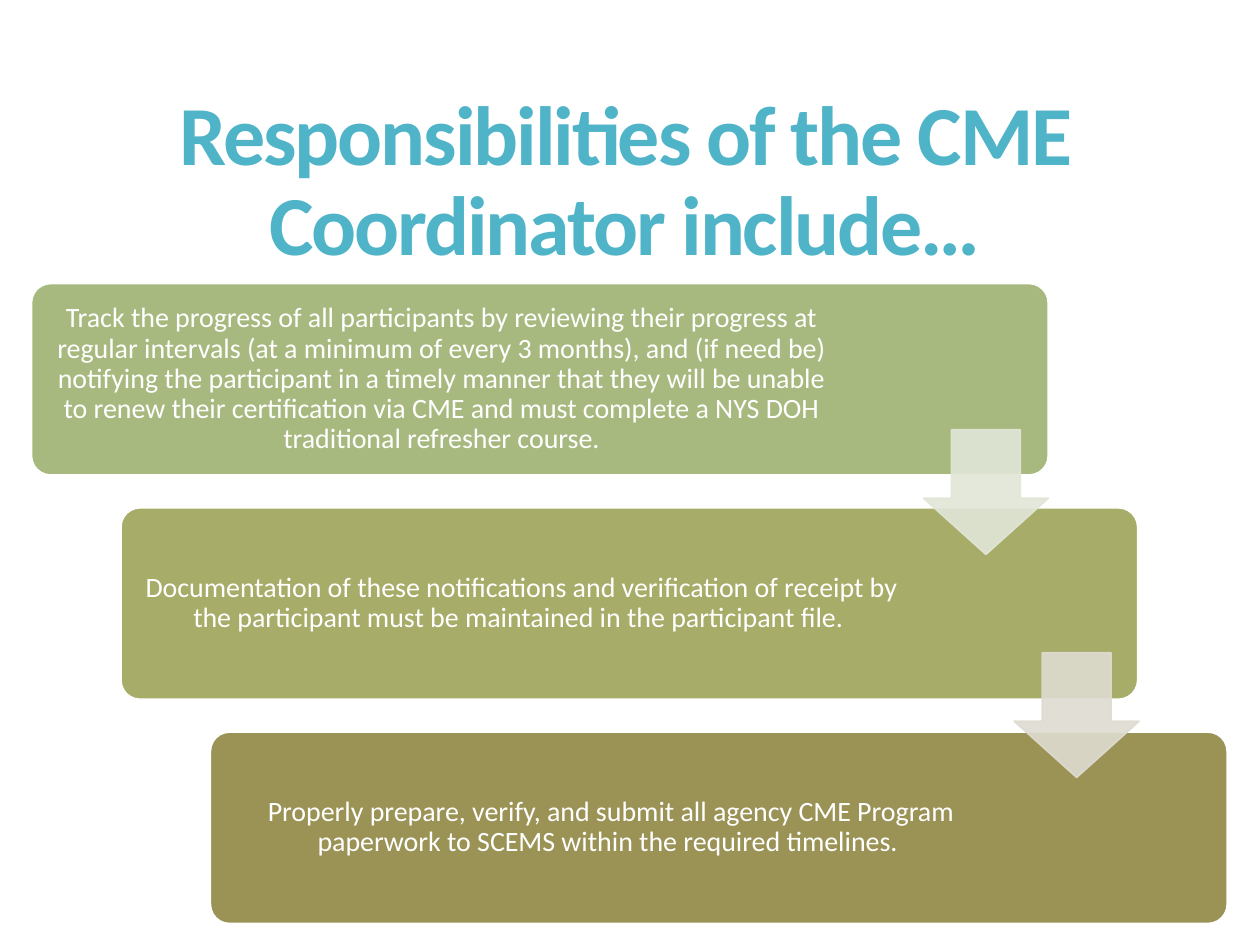
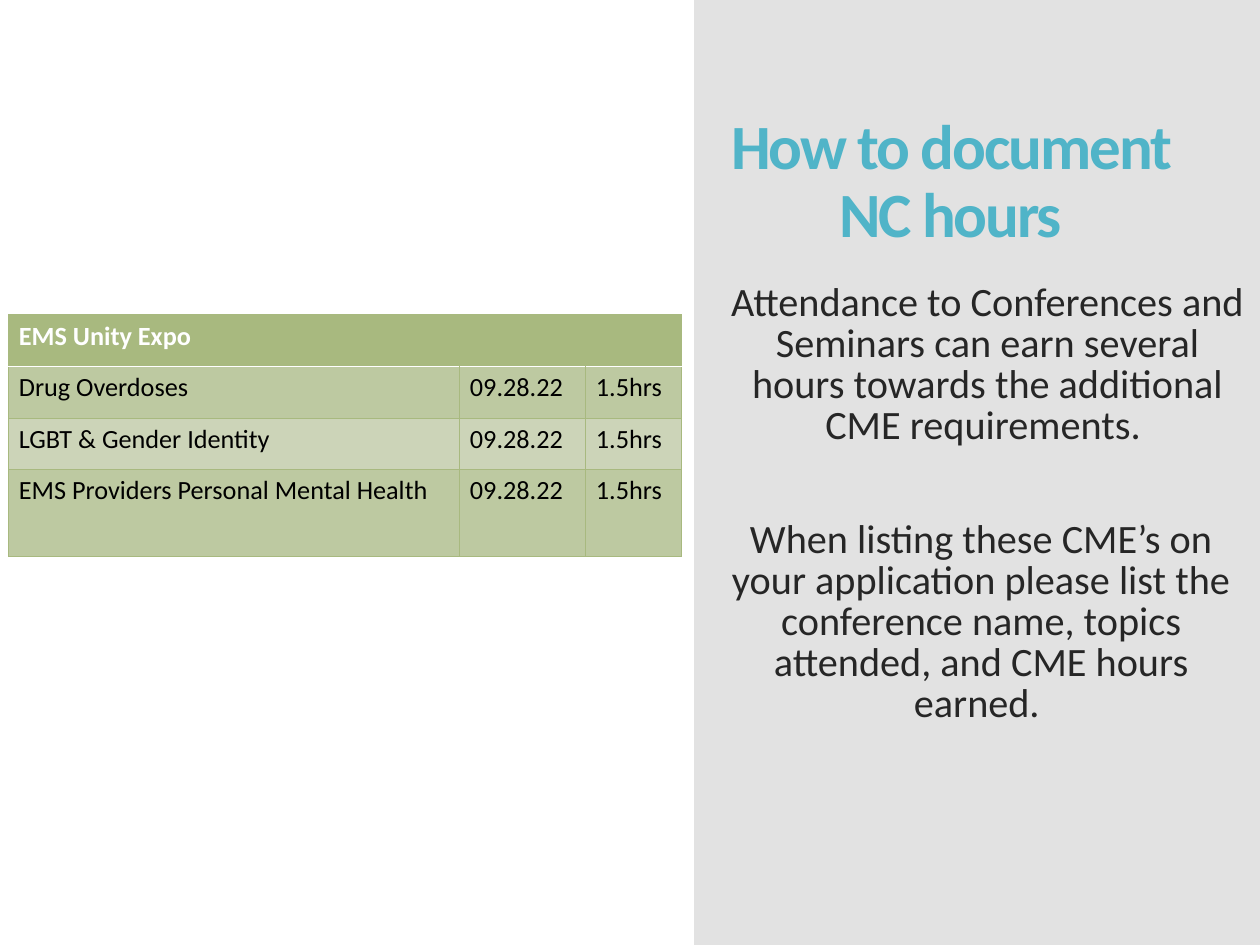
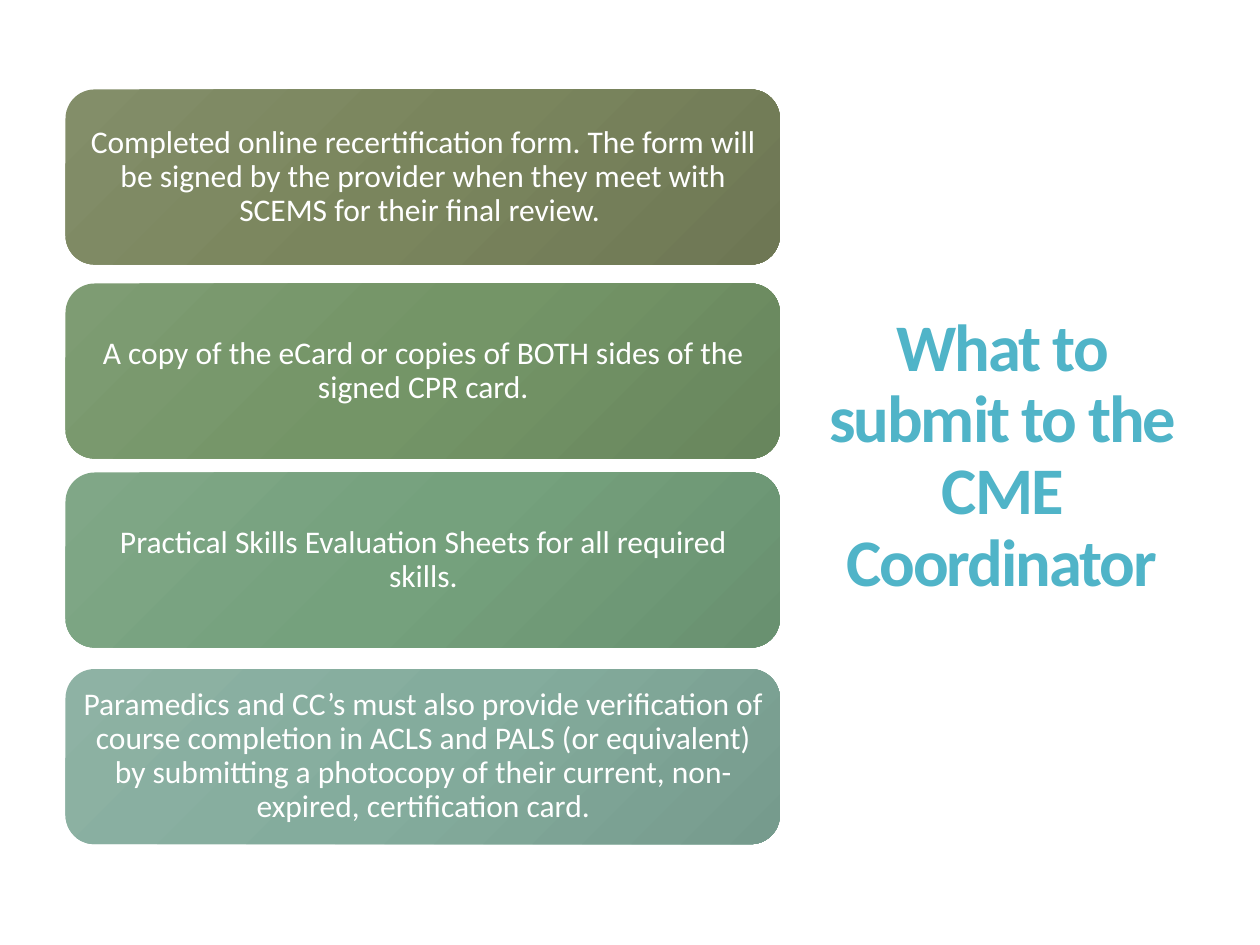
import copy

import pptx
import pptx.dml.color
import pptx.enum.shapes
import pptx.enum.text
import pptx.oxml
import pptx.oxml.ns
import pptx.util

Inches = pptx.util.Inches
Pt = pptx.util.Pt
SHAPES = pptx.enum.shapes.MSO_SHAPE
ALIGN = pptx.enum.text.PP_ALIGN
ANCHOR = pptx.enum.text.MSO_ANCHOR
qn = pptx.oxml.ns.qn

FONT = "Calibri"
COLORS = {
    "title": "50B4C8",
    "body": "262626",
    "white": "FFFFFF",
    "black": "000000",
    "sidebar": "D9D9D9",
    "table": "A8B97F",
    "band_dark": "BDC9A1",
    "band_light": "CCD4B8",
}

STEP_FILLS = ["A8B97F", "A7AC68", "9B9256"]
ARROW_FILLS = ["E1E6D8", "DEDCD1"]
STEPS = [
    "Track the progress of all participants by reviewing their progress at regular "
    "intervals (at a minimum of every 3 months), and (if need be) notifying the "
    "participant in a timely manner that they will be unable to renew their "
    "certification via CME and must complete a NYS DOH traditional refresher course.",
    "Documentation of these notifications and verification of receipt by the "
    "participant must be maintained in the participant file. ",
    "Properly prepare, verify, and submit all agency CME Program paperwork to SCEMS "
    "within the required timelines. ",
]

SESSIONS = [
    ("Drug Overdoses", "09.28.22", "1.5hrs"),
    ("LGBT & Gender Identity", "09.28.22", "1.5hrs"),
    ("EMS Providers Personal Mental Health", "09.28.22", "1.5hrs"),
]

# Top of the card, gradient colours, text
SUBMISSIONS = [
    (0.71, ("838E69", "7A855D", "6E7754"),
     "Completed online recertification form. The form will be signed by the provider "
     "when they meet with SCEMS for their final review. "),
    (2.25, ("7E9C73", "749567", "68865D"),
     "A copy of the eCard or copies of BOTH sides of the signed CPR card."),
    (3.75, ("80A787", "75A17D", "699170"),
     "Practical Skills Evaluation Sheets for all required skills."),
    (5.31, ("8EB2A4", "84AC9D", "769B8D"),
     "Paramedics and CC’s must also provide verification of course completion in ACLS "
     "and PALS (or equivalent) by submitting a photocopy of their current, "
     "non-expired, certification card."),
]


def rgb(value):
    return pptx.dml.color.RGBColor.from_string(value)


def inches(*lengths):
    return [Inches(length) for length in lengths]


def set_solid(fill, color, opacity=100):
    fill.solid()
    fill.fore_color.rgb = rgb(color)
    if opacity < 100:
        element = fill._xPr.find(qn("a:solidFill")).find(qn("a:srgbClr"))
        alpha = pptx.oxml.parse_xml(
            f'<a:alpha {pptx.oxml.ns.nsdecls("a")} val="{opacity * 1000}"/>')
        element.append(alpha)


def set_gradient(shape, colors):
    shape.fill.gradient()
    shape.fill.gradient_angle = 315
    stop_list = shape._element.spPr.find(qn("a:gradFill")).find(qn("a:gsLst"))
    stop_list.append(copy.deepcopy(stop_list[0]))
    for index, (stop, color) in enumerate(zip(shape.fill.gradient_stops, colors)):
        stop.position = index / (len(colors) - 1)
        stop.color.rgb = rgb(color)


def add_span(para, text, size, color, bold=False, spacing=None):
    span = para.add_run()
    span.text = text
    span.font.name = FONT
    span.font.size = Pt(size)
    span.font.bold = bold
    span.font.color.rgb = rgb(color)
    if spacing:
        span._r.get_or_add_rPr().set("spc", str(spacing))


def add_text(page, at, paragraphs, size, color, line_spacing=0.9, gap=0,
             inset=None, anchor=ANCHOR.MIDDLE, bold=False, spacing=None):
    box = page.shapes.add_textbox(*inches(*at))
    frame = box.text_frame
    frame.word_wrap = True
    frame.vertical_anchor = anchor
    if inset is not None:
        frame.margin_left = frame.margin_right = Inches(inset)
        frame.margin_top = frame.margin_bottom = Inches(inset)
    for index, text in enumerate(paragraphs):
        para = frame.paragraphs[0] if index == 0 else frame.add_paragraph()
        para.alignment = ALIGN.CENTER
        para.line_spacing = line_spacing
        para.space_before = Pt(gap if index else 0)
        add_span(para, text, size, color, bold, spacing)
    return box


def add_title(page, at, text, size):
    add_text(page, at, [text], size, COLORS["title"], bold=True, spacing=-120)


def add_panel(page, kind, at, adjustments=()):
    shape = page.shapes.add_shape(kind, *inches(*at))
    shape.shadow.inherit = False
    shape.line.fill.background()
    for index, value in enumerate(adjustments):
        shape.adjustments[index] = value
    return shape


def add_border(cell, side, color, width):
    border = pptx.oxml.parse_xml(
        f'<a:{side} {pptx.oxml.ns.nsdecls("a")} w="{Pt(width)}">'
        f'<a:solidFill><a:srgbClr val="{color}"/></a:solidFill></a:{side}>')
    properties = cell._tc.get_or_add_tcPr()
    # Borders stand before the fill, in the order left, right, top, bottom
    properties.insert(len(properties) - 1, border)


def style_cell(cell, fill, top=None, bottom=None):
    cell.margin_left = cell.margin_right = Inches(0.08)
    cell.margin_top = cell.margin_bottom = Inches(0.04)
    set_solid(cell.fill, fill)
    plain = (COLORS["table"], 0.75)
    for side, line in (("lnL", plain), ("lnR", plain),
                       ("lnT", top or plain), ("lnB", bottom or plain)):
        add_border(cell, side, *line)


def add_session_table(page):
    widths, heights = [3.58, 1, 0.76], [0.41, 0.41, 0.41, 0.69]
    table = page.shapes.add_table(
        len(heights), len(widths),
        *inches(0.07, 2.5, sum(widths), sum(heights))).table
    for column, width in zip(table.columns, widths):
        column.width = Inches(width)
    for row, height in zip(table.rows, heights):
        row.height = Inches(height)

    # Heading across all columns
    white_line = (COLORS["white"], 1)
    for cell in table.rows[0].cells:
        style_cell(cell, COLORS["table"], bottom=white_line)
    heading = table.cell(0, 0)
    heading.merge(table.cell(0, len(widths) - 1))
    add_span(heading.text_frame.paragraphs[0], "EMS Unity Expo", 15,
             COLORS["white"], bold=True)

    # Sessions in alternating bands
    for row, session in enumerate(SESSIONS, start=1):
        band = COLORS["band_dark" if row % 2 else "band_light"]
        for column, text in enumerate(session):
            cell = table.cell(row, column)
            style_cell(cell, band, top=white_line if row == 1 else None)
            add_span(cell.text_frame.paragraphs[0], text, 15, COLORS["black"])


def build_responsibilities(page):
    add_title(page, (0.54, 0.55, 8.84, 1.81),
              "Responsibilities of the CME Coordinator include…", 48)
    # Descending steps
    for index, (text, color) in enumerate(zip(STEPS, STEP_FILLS)):
        left, top = 0.25 + 0.71 * index, 2.25 + 1.78 * index
        step = add_panel(page, SHAPES.ROUNDED_RECTANGLE, (left, top, 8.07, 1.52), [0.1])
        set_solid(step.fill, color)
        set_solid(step.line.fill, COLORS["white"])
        step.line.width = Pt(1)
        width = 6.28 if index else 6.43
        add_text(page, (left + 0.04, top + 0.04, width, 1.44), [text], 16,
                 COLORS["white"], inset=0.07)
    # Arrows from step to step
    for index, color in enumerate(ARROW_FILLS):
        at = (7.33 + 0.72 * index, 3.41 + 1.77 * index, 0.99, 0.99)
        arrow = add_panel(page, SHAPES.DOWN_ARROW, at)
        arrow.adjustments[0] = 0.55
        arrow.adjustments[1] = 0.45
        set_solid(arrow.fill, color, 90)
        set_solid(arrow.line.fill, color, 90)
        arrow.line.width = Pt(1)


def build_hours(page):
    sidebar = add_panel(page, SHAPES.RECTANGLE, (5.51, 0, 4.49, 7.5))
    set_solid(sidebar.fill, COLORS["sidebar"], 75)
    add_title(page, (5.51, 0.55, 4.07, 1.81), "How to document NC hours", 36)
    advice = add_text(
        page, (5.58, 2.2, 4.42, 4.88),
        ["Attendance to Conferences and Seminars can earn several hours towards the "
         "additional CME requirements. ",
         "When listing these CME’s on your application please list the conference "
         "name, topics attended, and CME hours earned. "],
        23, COLORS["body"], line_spacing=0.85, gap=42, anchor=ANCHOR.TOP)
    first = advice.text_frame.paragraphs[0]
    first._p.get_or_add_pPr().set("marL", str(Inches(0.1)))
    add_session_table(page)


def build_submissions(page):
    add_title(page, (6.43, 0.55, 3.04, 6.16), "What to submit to the CME Coordinator", 38)
    for top, colors, text in SUBMISSIONS:
        card = add_panel(page, SHAPES.ROUNDED_RECTANGLE, (0.52, top, 5.67, 1.39))
        set_gradient(card, colors)
        add_text(page, (0.59, top + 0.07, 5.54, 1.25), [text], 18,
                 COLORS["white"], inset=0.07)


def main():
    deck = pptx.Presentation()
    deck.slide_width, deck.slide_height = inches(10, 7.5)
    for build in (build_responsibilities, build_hours, build_submissions):
        build(deck.slides.add_slide(deck.slide_layouts[6]))
    deck.save("out.pptx")


if __name__ == "__main__":
    main()
